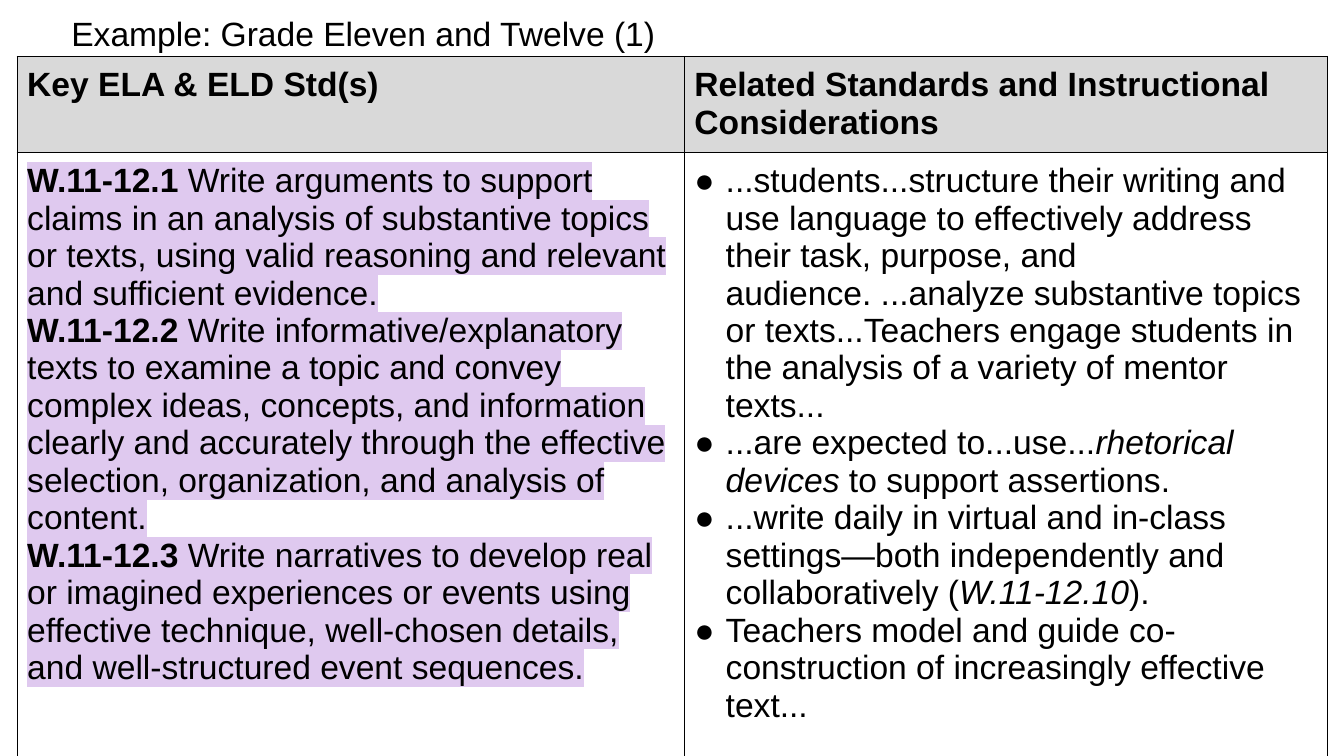
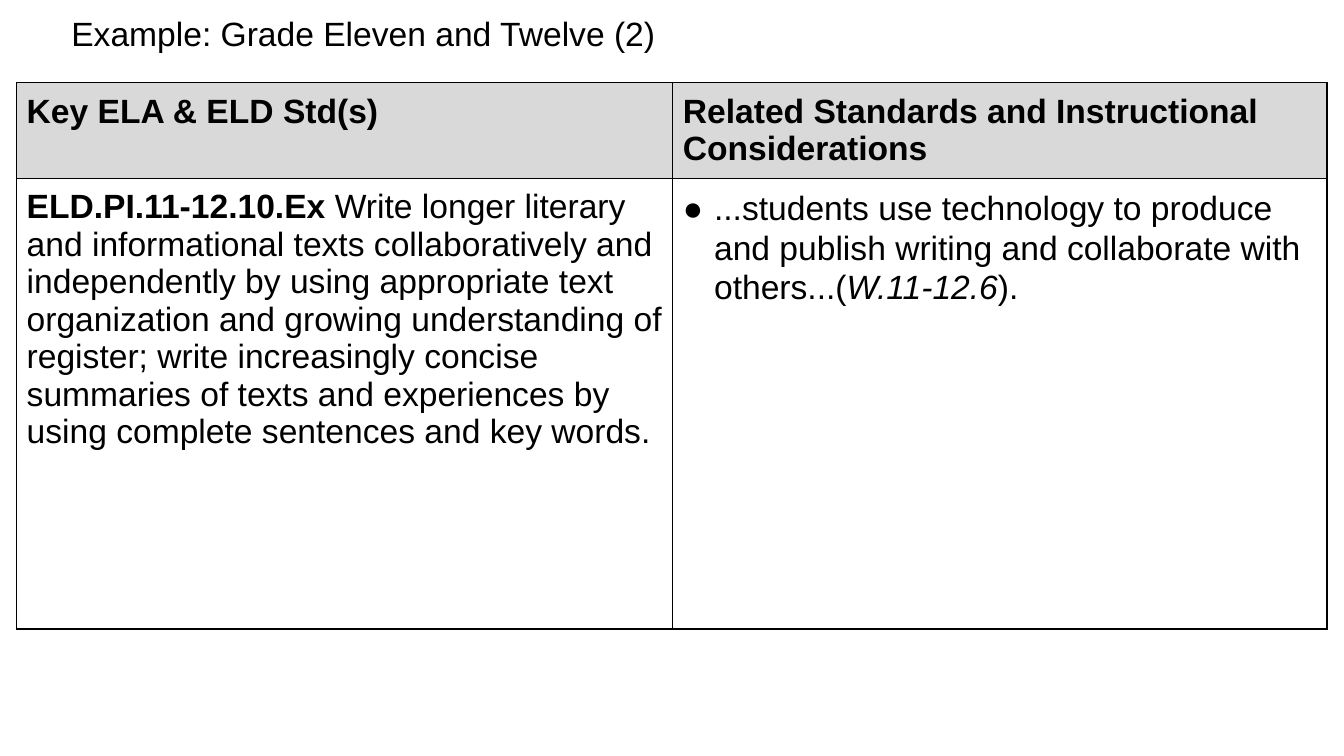
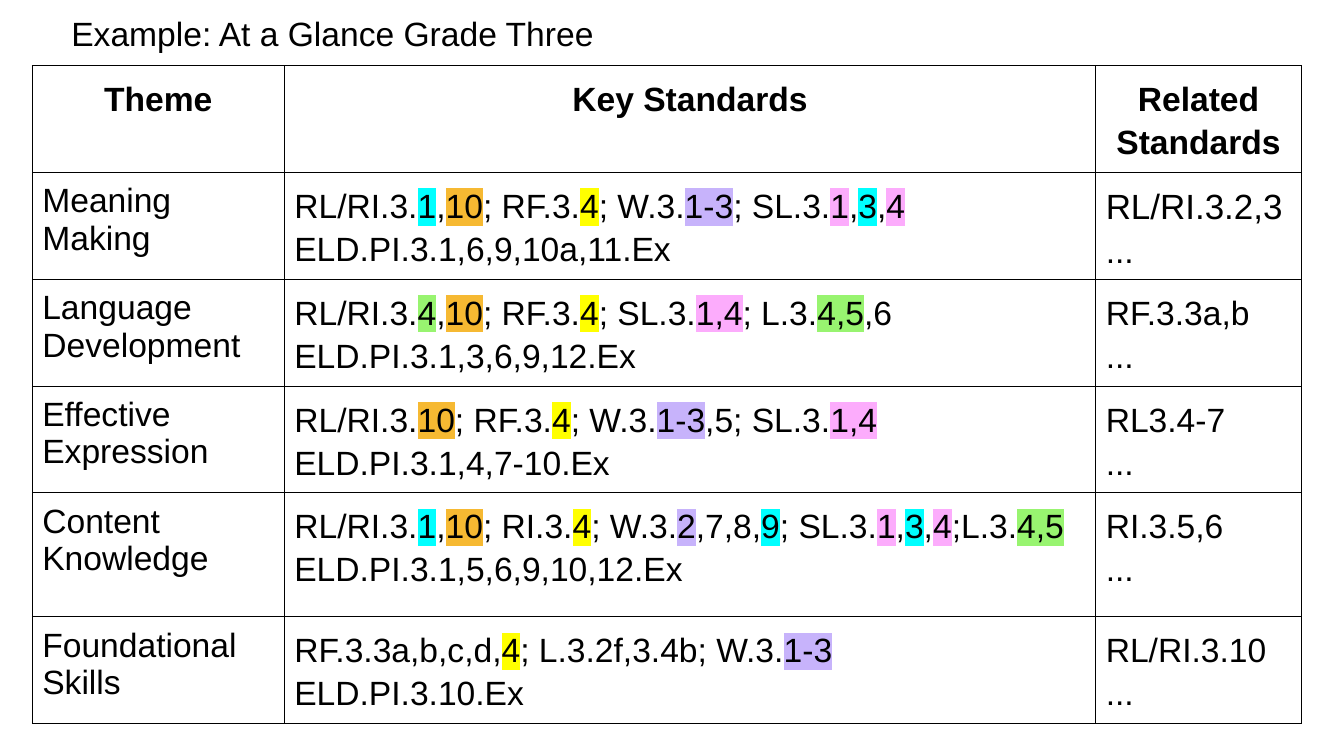
import pptx
import pptx.util
import pptx.dml.color
import pptx.enum.text
import pptx.oxml
import pptx.oxml.ns
from lxml import etree

COLORS = {
    "ink": "000000", "paper": "FFFFFF", "header": "D9D9D9", "lilac": "DFC9EF",
    "cyan": "00FFFF", "orange": "F6B932", "yellow": "FFFF00",
    "violet": "C7B3FB", "pink": "FCACFC", "green": "98F470",
}
FACE = "Arial"
FONT = {"name": FACE, "size": pptx.util.Pt(24), "bold": False, "italic": False}
MARKS = {
    "b": {"bold": True},
    "i": {"italic": True},
    "s": {"size": pptx.util.Pt(25)},
    "k": {"bold": True, "highlight": "lilac"},
    "l": {"highlight": "lilac"},
    "c": {"highlight": "cyan"},
    "o": {"highlight": "orange"},
    "y": {"highlight": "yellow"},
    "v": {"highlight": "violet"},
    "p": {"highlight": "pink"},
    "g": {"highlight": "green"},
}
CENTER = pptx.enum.text.PP_ALIGN.CENTER
FLUSH = {"space_before": pptx.util.Pt(0), "space_after": pptx.util.Pt(0)}
PLAIN = {**FLUSH, "line_spacing": 1.0}
LOOSE = {**FLUSH, "line_spacing": 1.15}
CENTERED = {**LOOSE, "alignment": CENTER}
SPACED = {**PLAIN, "space_before": pptx.util.Pt(12)}
AIRY = {**FLUSH, "line_spacing": 1.05, "space_before": pptx.util.Pt(2)}
MARGIN = pptx.util.Inches(0.1)
MARGINS = {"margin_left": MARGIN, "margin_right": MARGIN, "margin_top": MARGIN,
           "margin_bottom": pptx.util.Inches(0.02)}

GRID_COLS, GRID_ROWS = 160, 90
WIDTH, HEIGHT = pptx.util.Inches(40 / 3), pptx.util.Inches(7.5)
TITLE_BOX = (7.32, 0.36, 138, 7.68)
HEADINGS = ["[bKey ELA & ELD Std(s)]",
            "[bRelated Standards and Instructional Considerations]"]

STANDARDS = [
    {
        "title": "Example: Grade Eleven and Twelve (1)",
        "box": (2.04, 6.72, 156, 81), "cols": [6.62, 6.38], "rows": [0.95, 5.8],
        "looks": (PLAIN, PLAIN),
        "key": [
            "[kW.11-12.1 ][lWrite arguments to support claims in an analysis of substantive topics or texts, using valid reasoning and relevant and sufficient evidence.]",
            "[kW.11-12.2 ][lWrite informative/explanatory texts to examine a topic and convey complex ideas, concepts, and information clearly and accurately through the effective selection, organization, and analysis of content.]",
            "[kW.11-12.3 ][lWrite narratives to develop real or imagined experiences or events using effective technique, well-chosen details, and well-structured event sequences.]",
        ],
        "related": [
            "...students...structure their writing and use language to effectively address their task, purpose, and audience. ...analyze substantive topics or texts...Teachers engage students in the analysis of a variety of mentor texts...",
            "...are expected to...use...[irhetorical devices] to support assertions.",
            "...write daily in virtual and in-class settings—both independently and collaboratively ([iW.11-12.10]).",
            "Teachers model and guide co-construction of increasingly effective text...",
        ],
    },
    {
        "title": "Example: Grade Eleven and Twelve (2)",
        "box": (1.98, 9.84, 156, 65.04), "cols": [6.51, 6.49], "rows": [0.95, 4.47],
        "looks": (SPACED, AIRY),
        "key": [
            "[bELD.PI.11-12.10.Ex ]Write longer literary and informational texts collaboratively and independently by using appropriate text organization and growing understanding of register; write increasingly concise summaries of texts and experiences by using complete sentences and key words.",
        ],
        "related": [
            "...students use technology to produce and publish writing and collaborate with others...([iW.11-12.6]).",
        ],
    },
]

THEMES = [
    ("Meaning Making",
     "RL/RI.3.[c1],[o10]; RF.3.[y4]; W.3.[v1-3]; SL.3.[p1],[c3],[p4]",
     "ELD.PI.3.1,6,9,10a,11.Ex", "[sRL/RI.3.2,3]"),
    ("Language Development",
     "RL/RI.3.[g4],[o10]; RF.3.[y4]; SL.3.[p1,4]; L.3.[g4,5],6",
     "ELD.PI.3.1,3,6,9,12.Ex", "RF.3.3a,b"),
    ("Effective Expression",
     "RL/RI.3.[o10]; RF.3.[y4]; W.3.[v1-3],5; SL.3.[p1,4]",
     "ELD.PI.3.1,4,7-10.Ex", "RL3.4-7"),
    ("Content Knowledge",
     "RL/RI.3.[c1],[o10]; RI.3.[y4]; W.3.[v2],7,8,[c9]; SL.3.[p1],[c3],[p4];L.3.[g4,5]",
     "ELD.PI.3.1,5,6,9,10,12.Ex", "RI.3.5,6"),
    ("Foundational Skills",
     "RF.3.3a,b,c,d,[y4]; L.3.2f,3.4b; W.3.[v1-3]",
     "ELD.PI.3.10.Ex", "RL/RI.3.10"),
]


def rgb(name):
    return pptx.dml.color.RGBColor.from_string(COLORS[name])


def place(box):
    x, y, w, h = box
    return [int(v) for v in (x * WIDTH / GRID_COLS, y * HEIGHT / GRID_ROWS,
                             w * WIDTH / GRID_COLS, h * HEIGHT / GRID_ROWS)]


def sub(parent, tag, **attrs):
    return etree.SubElement(parent, pptx.oxml.ns.qn(tag), attrs)


def set_all(target, values):
    for name, value in values.items():
        setattr(target, name, value)


def add_run(p, text, mark=None):
    r = p.add_run()
    r.text = text
    style = {**FONT, **MARKS.get(mark, {})}
    highlight = style.pop("highlight", None)
    set_all(r.font, style)
    r.font.color.rgb = rgb("ink")
    rPr = r.font._element
    rPr.set("lang", "en-US")
    for tag in ("a:ea", "a:cs"):
        sub(rPr, tag, typeface=FACE)
    if highlight:
        h = sub(rPr, "a:highlight")
        sub(h, "a:srgbClr", val=COLORS[highlight])
        rPr.find(pptx.oxml.ns.qn("a:solidFill")).addnext(h)


def add_bullet(p):
    pPr = p._p.get_or_add_pPr()
    indent = pptx.util.Inches(0.31)
    pPr.set("marL", str(indent))
    pPr.set("indent", str(-indent))
    sub(sub(pPr, "a:buClr"), "a:srgbClr", val=COLORS["ink"])
    sub(pPr, "a:buSzPts", val="2400")
    sub(pPr, "a:buFont", typeface=FACE)
    sub(pPr, "a:buChar", char="●")


def write(tf, lines, look, bullets=False):
    for n, line in enumerate(lines):
        p = tf.add_paragraph() if n else tf.paragraphs[0]
        set_all(p, look)
        if bullets:
            add_bullet(p)
        for k, part in enumerate(line.replace("]", "[").split("[")):
            if k % 2:
                add_run(p, part[1:], part[0])
            elif part:
                add_run(p, part)
        end = sub(p._p, "a:endParaRPr", lang="en-US", sz="2400")
        for tag in ("a:latin", "a:ea", "a:cs"):
            sub(end, tag, typeface=FACE)


def add_borders(cell, points):
    tcPr = cell._tc.get_or_add_tcPr()
    for n, side in enumerate(("a:lnL", "a:lnR", "a:lnT", "a:lnB")):
        ln = sub(tcPr, side, w=str(pptx.util.Pt(points)))
        sub(sub(ln, "a:solidFill"), "a:srgbClr", val=COLORS["ink"])
        tcPr.insert(n, ln)


def add_slide(prs, title):
    s = prs.slides.add_slide(prs.slide_layouts[6])
    s.background.fill.solid()
    s.background.fill.fore_color.rgb = rgb("paper")
    tf = s.shapes.add_textbox(*place(TITLE_BOX)).text_frame
    set_all(tf, {"word_wrap": True,
                 "vertical_anchor": pptx.enum.text.MSO_ANCHOR.MIDDLE})
    write(tf, [title], {"line_spacing": 0.9})
    return s


def add_grid(s, box, cols, rows, border, cells, header=None):
    x, y, w, h = place(box)
    table = s.shapes.add_table(len(rows), len(cols), x, y, w, h).table
    set_all(table, {"first_row": False, "horz_banding": False})
    for col, share in zip(table.columns, cols):
        col.width = int(w * share / sum(cols))
    for row, share in zip(table.rows, rows):
        row.height = int(h * share / sum(rows))
    for i, row in enumerate(cells):
        for j, content in enumerate(row):
            cell = table.cell(i, j)
            set_all(cell, MARGINS)
            if header and i == 0:
                cell.fill.solid()
                cell.fill.fore_color.rgb = rgb(header)
            else:
                cell.fill.background()
            add_borders(cell, border)
            write(cell.text_frame, *content)


def standards_slide(prs, d):
    s = add_slide(prs, d["title"])
    key_look, related_look = d["looks"]
    cells = [[([h], PLAIN) for h in HEADINGS],
             [(d["key"], key_look), (d["related"], related_look, True)]]
    add_grid(s, d["box"], d["cols"], d["rows"], 1, cells, "header")


def glance_slide(prs):
    s = add_slide(prs, "Example: At a Glance Grade Three")
    cells = [[([f"[b{h}]"], CENTERED)
              for h in ("Theme", "Key Standards", "Related Standards")]]
    for theme, key, eld, related in THEMES:
        cells.append([([theme], PLAIN), ([key, eld], LOOSE),
                      ([related, "..."], LOOSE)])
    add_grid(s, (3.84, 7.8, 151.08, 78.36), [2.5, 8.05, 2.04],
             [1.06, 1.06, 1.06, 1.06, 1.23, 1.06], 0.75, cells)


def main():
    prs = pptx.Presentation()
    set_all(prs, {"slide_width": WIDTH, "slide_height": HEIGHT})
    for d in STANDARDS:
        standards_slide(prs, d)
    glance_slide(prs)
    prs.save("out.pptx")


if __name__ == "__main__":
    main()
